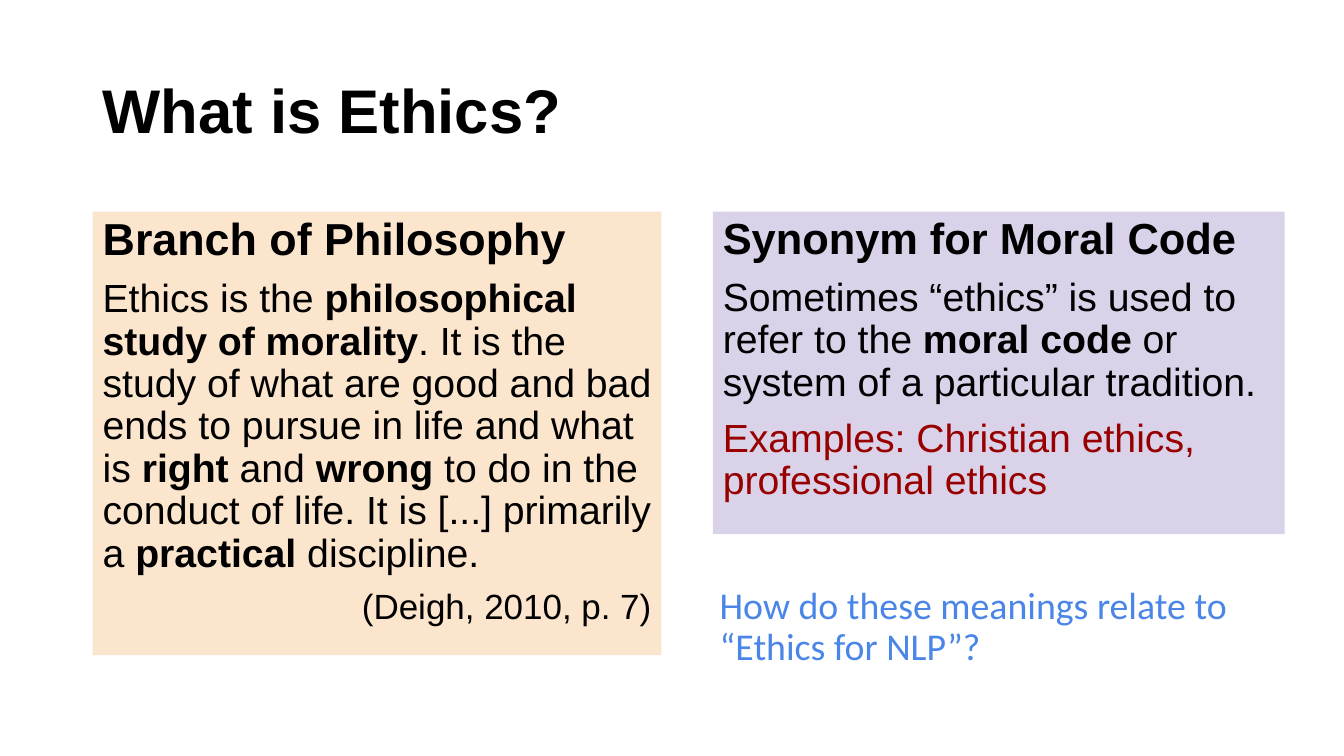
import dataclasses

import pptx
import pptx.dml.color
import pptx.enum.shapes
import pptx.enum.text
import pptx.util

ALIGN = pptx.enum.text.PP_ALIGN
ANCHOR = pptx.enum.text.MSO_ANCHOR


@dataclasses.dataclass(frozen=True)
class Theme:
    font: str = "Arial"
    question_font: str = "Calibri"
    ink: str = "000000"
    example: str = "980000"
    question: str = "4A86E8"
    philosophy: str = "FCE5CD"
    moral_code: str = "D9D2E9"
    title_size: int = 44
    philosophy_size: int = 32
    moral_code_size: int = 31
    body_size: int = 28
    question_size: int = 27
    citation_size: int = 25
    line_spacing: float = 0.9
    paragraph_gap: int = 10


class SlideBuilder:
    """Places elements by percentages of the slide's width and height."""

    def __init__(self, deck, theme):
        self.deck = deck
        self.theme = theme
        self.slide = deck.slides.add_slide(deck.slide_layouts[6])

    def place(self, left, top, width, height):
        across, down = self.deck.slide_width / 100, self.deck.slide_height / 100
        return [round(n) for n in (left * across, top * down, width * across, height * down)]

    def prepare(self, frame, anchor, margin):
        frame.word_wrap = True
        frame.vertical_anchor = anchor
        frame.margin_left = frame.margin_right = pptx.util.Inches(0.1)
        frame.margin_top = frame.margin_bottom = pptx.util.Inches(margin)
        return frame

    def text(self, area, anchor=ANCHOR.TOP, margin=0.05):
        box = self.slide.shapes.add_textbox(*self.place(*area))
        return self.prepare(box.text_frame, anchor, margin)

    def panel(self, area, fill):
        panel = self.slide.shapes.add_shape(
            pptx.enum.shapes.MSO_SHAPE.RECTANGLE, *self.place(*area))
        panel.shadow.inherit = False
        panel.fill.solid()
        panel.fill.fore_color.rgb = pptx.dml.color.RGBColor.from_string(fill)
        panel.line.fill.background()
        return self.prepare(panel.text_frame, ANCHOR.TOP, 0.05)

    def paragraph(self, frame, words, size, color=None, font=None, bold=False,
                  align=ALIGN.LEFT, gap=None):
        """Writes one paragraph; words between ** marks are bold."""
        first = not frame.paragraphs[0].runs
        paragraph = frame.paragraphs[0] if first else frame.add_paragraph()
        paragraph.alignment = align
        paragraph.line_spacing = self.theme.line_spacing
        paragraph.space_before = pptx.util.Pt(self.theme.paragraph_gap if gap is None else gap)
        paragraph.font.name = font or self.theme.font
        paragraph.font.size = pptx.util.Pt(size)
        paragraph.font.bold = bold
        paragraph.font.color.rgb = pptx.dml.color.RGBColor.from_string(color or self.theme.ink)
        for index, part in enumerate(words.split("**")):
            run = paragraph.add_run()
            run.text = part
            if index % 2:
                run.font.bold = True


def main():
    deck = pptx.Presentation()
    deck.slide_width = pptx.util.Inches(13.33)
    deck.slide_height = pptx.util.Inches(7.5)
    theme = Theme()
    page = SlideBuilder(deck, theme)
    left, right, top = 6.9, 53.04, 28

    title = page.text((left, 5.33, 86.27, 19.33), anchor=ANCHOR.MIDDLE)
    page.paragraph(title, "What is Ethics?", theme.title_size, bold=True, gap=0)

    philosophy = page.panel((left, top, 42.31, 58.67), theme.philosophy)
    page.paragraph(philosophy, "Branch of Philosophy", theme.philosophy_size, bold=True)
    page.paragraph(
        philosophy,
        "Ethics is the **philosophical study of morality**. It is the study of what are "
        "good and bad ends to pursue in life and what is **right** and **wrong** to do in "
        "the conduct of life. It is [...] primarily a **practical **discipline.",
        theme.body_size)
    page.paragraph(philosophy, "(Deigh, 2010, p. 7)", theme.citation_size, align=ALIGN.RIGHT)

    moral_code = page.panel((right, top, 42.54, 42.67), theme.moral_code)
    page.paragraph(moral_code, "Synonym for Moral Code", theme.moral_code_size, bold=True)
    page.paragraph(
        moral_code,
        "Sometimes “ethics” is used to refer to the **moral code** or system of a "
        "particular tradition.",
        theme.body_size)
    page.paragraph(moral_code, "Examples: Christian ethics, professional ethics",
                   theme.body_size, color=theme.example)

    question = page.text((52.81, 76.27, 43.96, 13.6), margin=0.1)
    page.paragraph(question, "How do these meanings relate to “Ethics for NLP”?",
                   theme.question_size, color=theme.question, font=theme.question_font)

    deck.save("out.pptx")


if __name__ == "__main__":
    main()
